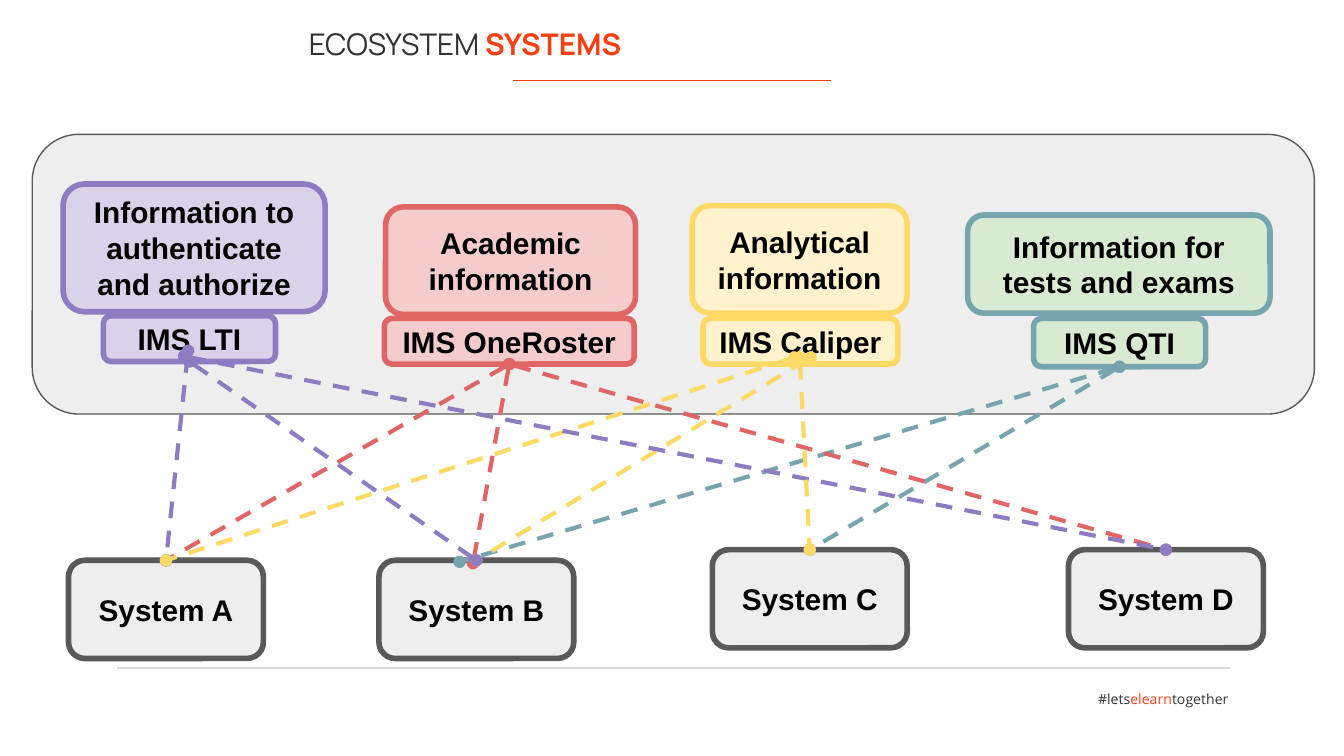
from lxml import etree
from pptx import Presentation
from pptx.dml.color import RGBColor
from pptx.enum.dml import MSO_LINE
from pptx.enum.shapes import MSO_CONNECTOR, MSO_SHAPE
from pptx.enum.text import MSO_ANCHOR, PP_ALIGN
from pptx.oxml.ns import qn
from pptx.util import Pt

ROUNDED, STRAIGHT = MSO_SHAPE.ROUNDED_RECTANGLE, MSO_CONNECTOR.STRAIGHT
DASH, MIDDLE = MSO_LINE.DASH, MSO_ANCHOR.MIDDLE
LEFT, CENTER, RIGHT = PP_ALIGN.LEFT, PP_ALIGN.CENTER, PP_ALIGN.RIGHT
TOP_SIDE, BOTTOM_SIDE = 0, 2

COLORS = {
    "text": "333333", "accent": "F84015", "black": "000000", "rule": "D8D8D8",
    "gray": "595959", "gray fill": "EEEEEE",
    "purple": "8E7CC3", "purple fill": "D9D2E9",
    "red": "E06666", "red fill": "F4CCCC",
    "yellow": "FFD966", "yellow fill": "FFF2CC",
    "teal": "76A5AF", "teal fill": "D9EAD3",
}

TITLE = [("ECOSYSTEM ", "text", False), ("SYSTEMS", "accent", True)]
HASHTAG = [("#lets", "text", False), ("elearn", "accent", False), ("together", "text", False)]

STANDARDS = [
    ("IMS LTI", "purple", (55.4, 169.2, 92.2, 24.5)),
    ("IMS OneRoster", "red", (205.9, 170.6, 133.9, 24.5)),
    ("IMS Caliper", "yellow", (376.6, 170.6, 104.4, 24.5)),
    ("IMS QTI", "teal", (553.7, 170.6, 92.2, 25.9)),
]
PURPOSES = [
    ("Information to authenticate and authorize", "purple", (33.8, 98.6, 140.4, 68.4)),
    ("Academic information", "red", (206.6, 110.9, 133.9, 57.6)),
    ("Analytical information", "yellow", (370.8, 110.2, 115.2, 57.6)),
    ("Information for tests and exams", "teal", (518.4, 115.2, 162, 52.6)),
]
SYSTEMS = [
    ("System A", "gray", (36.7, 300.2, 104.4, 52.6)),
    ("System B", "gray", (203, 300.2, 104.4, 52.6)),
    ("System C", "gray", (381.6, 294.5, 104.4, 52.6)),
    ("System D", "gray", (572.4, 294.5, 104.4, 52.6)),
]

# Each end is a box name to join, or a free point.
LINKS = [
    ("red", "IMS OneRoster", (253.4, 301.7)),
    ("red", "IMS OneRoster", "System A"),
    ("teal", "IMS QTI", "System C"),
    ("purple", (100.8, 187.9), "System A"),
    ("teal", "IMS QTI", (246.2, 301)),
    ("yellow", (434.2, 191.5), "System B"),
    ("yellow", (425.5, 191.5), "System A"),
    ("red", "IMS OneRoster", "System D"),
    ("purple", (98.6, 190.8), "System D"),
    ("yellow", (428.4, 191.5), "System C"),
    ("purple", "IMS LTI", "System B"),
]

prs = Presentation()
prs.slide_width, prs.slide_height = Pt(720), Pt(405)
s = prs.slides.add_slide(prs.slide_layouts[6])


def rgb(name):
    return RGBColor.from_string(COLORS[name])


def add_run(p, text, color, **font):
    r = p.add_run()
    r.text = text
    r.font.color.rgb = rgb(color)
    for key, value in font.items():
        setattr(r.font, key, value)


def add_text(box, runs, name, size, align):
    tf = s.shapes.add_textbox(*map(Pt, box)).text_frame
    tf.word_wrap = True
    p = tf.paragraphs[0]
    p.alignment = align
    for text, color, bold in runs:
        add_run(p, text, color, name=name, size=Pt(size), bold=bold)


def add_box(box, color, width, text=""):
    sp = s.shapes.add_shape(ROUNDED, *map(Pt, box))
    sp.shadow.inherit = False
    sp.fill.solid()
    sp.fill.fore_color.rgb = rgb(color + " fill")
    sp.line.color.rgb = rgb(color)
    sp.line.width = Pt(width)
    if text:
        tf = sp.text_frame
        tf.word_wrap, tf.vertical_anchor = True, MIDDLE
        for side in ("left", "top", "right", "bottom"):
            setattr(tf, "margin_" + side, Pt(7.2))
        p = tf.paragraphs[0]
        p.alignment = CENTER
        add_run(p, text, "black", name="Arial", size=Pt(16), bold=True)
    return sp


def add_line(start, end, color, width):
    line = s.shapes.add_connector(STRAIGHT, *map(Pt, (*start, *end)))
    line.line.color.rgb = rgb(color)
    line.line.width = Pt(width)
    etree.SubElement(line._element.spPr, qn("a:effectLst"))
    return line


def add_link(color, start, end):
    points = [p if isinstance(p, tuple) else (0, 0) for p in (start, end)]
    link = add_line(*points, color, 2.25)
    link.line.dash_style = DASH
    for tag in ("a:headEnd", "a:tailEnd"):
        etree.SubElement(link.line._get_or_add_ln(), qn(tag), type="oval")
    if start in boxes:
        link.begin_connect(boxes[start], BOTTOM_SIDE)
    if end in boxes:
        link.end_connect(boxes[end], TOP_SIDE)


add_line((62.6, 357.8), (658.8, 357.8), "rule", 1)
add_text((548.6, 366.5, 116.6, 16.6), HASHTAG, "Open Sans", 7.5, RIGHT)
add_text((158.4, 10.1, 424.8, 29.5), TITLE, "Manrope", 16, LEFT)
add_line((275, 43.2), (445, 43.2), "accent", 0.75)
add_box((17.3, 72, 686.9, 149.8), "gray", 0.75)

boxes = {}
for text, color, box in STANDARDS + PURPOSES + SYSTEMS:
    boxes[text] = add_box(box, color, 3, text)
for link in LINKS:
    add_link(*link)

prs.save("out.pptx")
